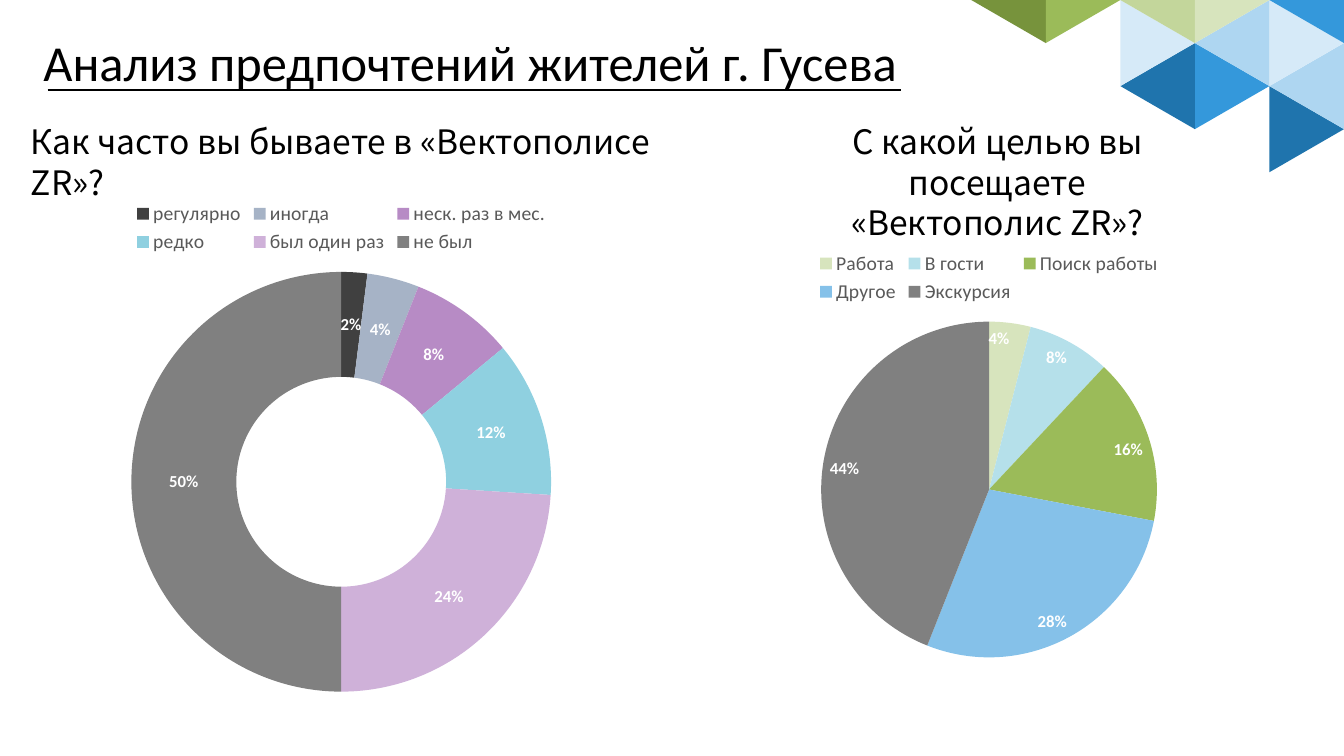
import pptx
import pptx.chart.data
import pptx.dml.color
import pptx.enum.chart
import pptx.enum.shapes
import pptx.enum.text
import pptx.util
import lxml.etree

Pt = pptx.util.Pt
SHAPE = pptx.enum.shapes.MSO_SHAPE
KIND = pptx.enum.chart.XL_CHART_TYPE
PLACE = pptx.enum.chart.XL_LABEL_POSITION
ALIGN = pptx.enum.text.PP_ALIGN
ANCHOR = pptx.enum.text.MSO_ANCHOR


def color(code):
    return pptx.dml.color.RGBColor.from_string(code)


def style(font, size, code, name="Calibri"):
    font.size = Pt(size)
    font.name = name
    font.color.rgb = color(code)


deck = pptx.Presentation()
deck.slide_width, deck.slide_height = Pt(960), Pt(540)
slide = deck.slides.add_slide(deck.slide_layouts[5])
shapes = slide.shapes

# Corner mosaic: column, row, fill; neighbours point opposite ways
mosaic = [
    (4, 3, "1F74AD"), (4, 2, "AED6F1"), (4, 1, "D6EAF8"),
    (3, 2, "3498DB"), (3, 1, "AED6F1"), (2, 2, "1F74AD"),
    (2, 1, "D6EAF8"), (2, 0, "C3D69B"), (3, 0, "D7E4BD"),
    (0, 0, "77933C"), (1, 0, "9BBB59"), (4, 0, "3498DB"),
]
side, step = 61.5, 53.25
for col, row, fill in mosaic:
    mid_x = 960 - step * (4.5 - col)
    mid_y = row * side / 2
    tile = shapes.add_shape(SHAPE.ISOSCELES_TRIANGLE, Pt(mid_x - side / 2),
                            Pt(mid_y - step / 2), Pt(side), Pt(step))
    tile.rotation = 270 if (col + row) % 2 == 0 else 90
    tile.shadow.inherit = False
    tile.fill.solid()
    tile.fill.fore_color.rgb = color(fill)
    tile.line.fill.background()

title = shapes.title
title.left, title.top, title.width, title.height = Pt(31), Pt(22.5), Pt(828), Pt(62)
frame = title.text_frame
frame.margin_left = frame.margin_right = frame.margin_top = frame.margin_bottom = 0
frame.vertical_anchor = ANCHOR.TOP
frame.word_wrap = True
frame.text = "Анализ предпочтений жителей г. Гусева"
frame.paragraphs[0].alignment = ALIGN.LEFT
style(frame.paragraphs[0].runs[0].font, 36, "000000")

line = shapes.add_connector(pptx.enum.shapes.MSO_CONNECTOR.STRAIGHT,
                            Pt(34), Pt(64), Pt(643.5), Pt(64))
line.line.color.rgb = color("000000")
line.line.width = Pt(1.5)
lxml.etree.SubElement(line._element.spPr, pptx.oxml.ns.qn("a:effectLst"))

# Chart headings: text, left, width, height, alignment
heads = [
    ("Как часто вы бываете в «Вектополисе ZR»?", 15, 505.5, 36, ALIGN.LEFT),
    ("С какой целью вы посещаете\v«Вектополис ZR»?", 538, 349, 65.5, ALIGN.CENTER),
]
for text, left, width, height, align in heads:
    box = shapes.add_textbox(Pt(left), Pt(83), Pt(width), Pt(height))
    box.text_frame.word_wrap = True
    box.text_frame.text = text
    para = box.text_frame.paragraphs[0]
    para.alignment = align
    for run in para.runs:
        style(run.font, 24, "000000", "Noto Sans CJK SC")

# Charts: type, frame, label place, slices of name, percent, fill
charts = [
    (KIND.DOUGHNUT, (0, 136, 487.5, 368), None, [
        ("регулярно", 2, "404040"), ("иногда", 4, "A6B3C6"),
        ("неск. раз в мес.", 8, "B78BC5"), ("редко", 12, "8FD0E0"),
        ("был один раз", 24, "CFB1D9"), ("не был", 50, "808080")]),
    (KIND.PIE, (519, 171.5, 375, 308), PLACE.INSIDE_END, [
        ("Работа", 4, "D7E4BD"), ("В гости", 8, "B5E0EA"),
        ("Поиск работы", 16, "9BBB59"), ("Другое", 28, "85C1E9"),
        ("Экскурсия", 44, "808080")]),
]
for kind, area, place, slices in charts:
    data = pptx.chart.data.CategoryChartData()
    data.categories = [name for name, value, fill in slices]
    data.add_series("Series 1", [value for name, value, fill in slices])
    chart = shapes.add_chart(kind, *map(Pt, area), data).chart
    chart.has_title = False
    style(chart.font, 10, "000000")
    chart.has_legend = True
    chart.legend.position = pptx.enum.chart.XL_LEGEND_POSITION.TOP
    chart.legend.include_in_layout = False
    style(chart.legend.font, 14, "595959")
    plot = chart.plots[0]
    plot.vary_by_categories = True
    for spot, (name, value, fill) in enumerate(slices):
        point = plot.series[0].points[spot].format
        point.fill.solid()
        point.fill.fore_color.rgb = color(fill)
        point.line.fill.background()
    labels = plot.series[0].data_labels
    labels.show_percentage = True
    labels.show_value = False
    labels.number_format = "0%"
    labels.number_format_is_linked = False
    style(labels.font, 12, "FFFFFF")
    labels.font.bold = True
    if place is not None:
        labels.position = place

deck.save("out.pptx")
